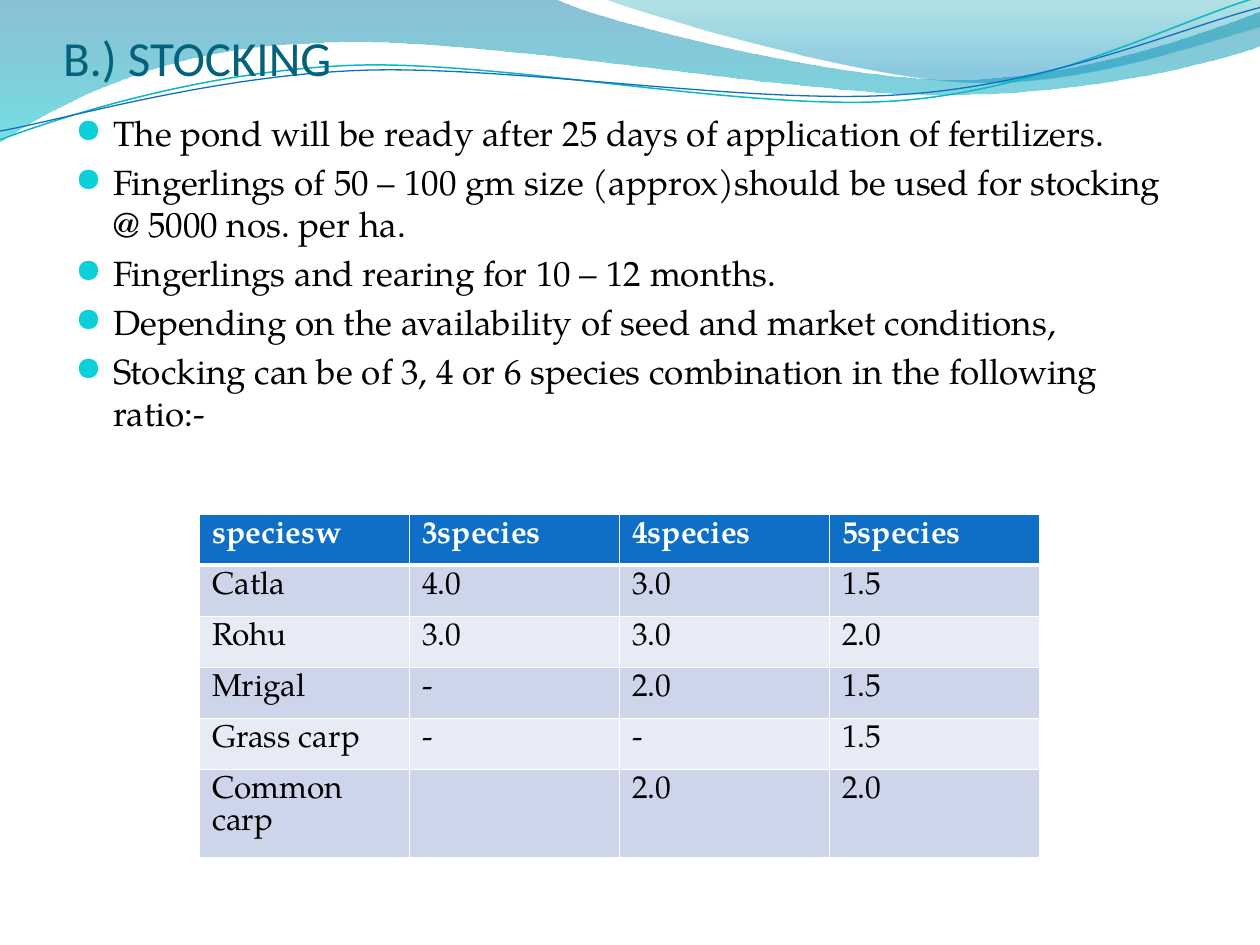
import dataclasses
import pptx
import pptx.util
import pptx.dml.color
import pptx.enum.text
import pptx.oxml
import pptx.oxml.ns

WIDE, HIGH = 10, 7.5


@dataclasses.dataclass(frozen=True)
class Theme:
    head: str = "Calibri"
    text: str = "TeX Gyre Pagella"
    mark: str = "OpenSymbol"
    title: str = "04617B"
    ink: str = "000000"
    white: str = "FFFFFF"
    bullet: str = "0BD0D9"
    blue: str = "0F6FC6"
    teal: str = "0AB8BF"
    bands: tuple = ("CCD5EA", "E7EBF5")
    big: int = 28
    body: int = 20
    cell: int = 18


THEME = Theme()

WAVES = [
    ([(0, 0), (4.4, -0.01),
      (4.76, 0.17, 6.64, 0.63, 7.58, 0.63),
      (8.53, 0.63, 9.58, 0.26, 10, 0.09), (10.01, 0.36),
      (9.83, 0.44, 8.7, 0.76, 7.46, 0.75),
      (6.22, 0.75, 3.82, 0.28, 2.57, 0.34),
      (1.29, 0.36, 0.46, 0.83, -0.01, 1.13), (0, 0)],
     [(0, "0074A1", 45), (1, "00C6CF", 55)]),
    ([(4.79, -0.01),
      (5.09, 0.11, 6.82, 0.62, 7.69, 0.65),
      (8.56, 0.69, 9.61, 0.32, 10, 0.21), (10, 0), (4.79, -0.01)],
     [(0, "00A1A9", 30), (0.8, "008BBF", 45)]),
]
STROKES = [
    ([(0, 1.11),
      (0.48, 0.93, 1.58, 0.57, 2.77, 0.52),
      (3.95, 0.47, 5.93, 0.89, 7.13, 0.8),
      (8.33, 0.71, 9.38, 0.15, 9.98, -0.02)], THEME.teal, 0.85),
    ([(0, 1.04),
      (0.47, 0.96, 1.64, 0.61, 2.83, 0.56),
      (4.03, 0.51, 5.97, 0.84, 7.17, 0.75),
      (8.36, 0.67, 9.41, 0.21, 10, 0.06)], THEME.blue, 0.75),
]
POINTS = [
    "The pond will be ready after 25 days of application of fertilizers.",
    "Fingerlings of 50 – 100 gm size (approx)should be used for stocking @ 5000 nos. per ha.",
    "Fingerlings and rearing for 10 – 12 months.",
    "Depending on the availability of seed and market conditions,",
    "Stocking can be of 3, 4 or 6 species combination in the following ratio:-",
]
RATIOS = [
    ("speciesw", "3species", "4species", "5species"),
    ("Catla", "4.0", "3.0", "1.5"),
    ("Rohu", "3.0", "3.0", "2.0"),
    ("Mrigal", "-", "2.0", "1.5"),
    ("Grass carp", "-", "-", "1.5"),
    ("Common carp", "", "2.0", "2.0"),
]


def inch(num):
    return pptx.util.Inches(num)


def shade(code):
    return pptx.dml.color.RGBColor.from_string(code)


def style(font, name, size, color, bold=False):
    font.name, font.size, font.bold = name, pptx.util.Pt(size), bold
    font.color.rgb = shade(color)


def node(tag, *kids, **attrs):
    item = pptx.oxml.parse_xml(f"<a:{tag} {pptx.oxml.ns.nsdecls('a')}/>")
    for key, val in attrs.items():
        item.set(key, str(val))
    item.extend(kids)
    return item


def add_curve(slide, parts, close):
    dots = [(inch(x), inch(y)) for part in parts for x, y in zip(part[::2], part[1::2])]
    pen = slide.shapes.build_freeform(*dots[0])
    pen.add_line_segments(dots[1:], close=close)
    shape = pen.convert_to_shape()
    shape.shadow.inherit = False
    lines = iter(list(shape._element.iter(pptx.oxml.ns.qn("a:lnTo"))))
    for part in parts[1:]:
        group = [next(lines) for _ in part[::2]]
        if len(group) == 3:
            bend = node("cubicBezTo")
            group[0].addprevious(bend)
            for line in group:
                bend.append(line[0])
                line.getparent().remove(line)
    return shape


def add_wave(slide, parts, stops):
    shape = add_curve(slide, parts, True)
    shape.line.fill.background()
    shape.fill.gradient()
    shape.fill.gradient_angle = 270
    for stop, (place, color, _) in zip(shape.fill.gradient_stops, stops):
        stop.position = place
        stop.color.rgb = shade(color)
    tag = pptx.oxml.ns.qn("a:srgbClr")
    for item, (_, _, alpha) in zip(shape._element.spPr.iter(tag), stops):
        item.append(node("alpha", val=alpha * 1000))


def add_stroke(slide, parts, color, width):
    shape = add_curve(slide, parts, False)
    shape.fill.background()
    shape.line.color.rgb = shade(color)
    shape.line.width = pptx.util.Pt(width)


def set_title(slide, text):
    title = slide.shapes.title
    slide.shapes._spTree.append(title._element)
    title.left, title.top = inch(0.05 * WIDE), inch(0.17)
    title.width, title.height = inch(0.9 * WIDE), inch(1.08)
    frame = title.text_frame
    frame.text = text
    frame.margin_left = frame.margin_right = 0
    frame.vertical_anchor = pptx.enum.text.MSO_ANCHOR.TOP
    para = frame.paragraphs[0]
    para.alignment = pptx.enum.text.PP_ALIGN.LEFT
    style(para.font, THEME.head, THEME.big, THEME.title)


def add_list(slide, lines):
    box = slide.shapes.add_textbox(inch(0.05 * WIDE), inch(HIGH / 9), inch(0.9 * WIDE), inch(6.42))
    frame = box.text_frame
    frame.word_wrap = True
    frame.text = "\n".join(lines)
    for para in frame.paragraphs:
        style(para.font, THEME.text, THEME.body, THEME.ink)
        para.space_before = pptx.util.Pt(0.2 * THEME.body)
        props = para._p.get_or_add_pPr()
        props.set("marL", str(inch(0.3)))
        props.set("indent", str(inch(-0.3)))
        marks = [node("buClr", node("srgbClr", val=THEME.bullet)),
                 node("buSzPct", val=95000),
                 node("buFont", typeface=THEME.mark),
                 node("buChar", char="●")]
        for spot, mark in enumerate(marks, 1):
            props.insert(spot, mark)


def set_edges(cell, low):
    props = cell._tc.get_or_add_tcPr()
    for spot, side in enumerate("LRTB"):
        width = low if side == "B" else 1
        fill = node("solidFill", node("srgbClr", val=THEME.white))
        props.insert(spot, node("ln" + side, fill, w=pptx.util.Pt(width)))


def add_grid(slide, rows):
    count, span = len(rows), len(rows[0])
    tall = pptx.util.Cm(1.03)
    frame = slide.shapes.add_table(count, span, inch(WIDE * 0.19 / 1.2), inch(4.08),
                                   inch(WIDE * 2 / 3), tall * count)
    for r, row in enumerate(rows):
        for c, text in enumerate(row):
            cell = frame.table.cell(r, c)
            cell.text = text
            cell.fill.solid()
            cell.fill.fore_color.rgb = shade(THEME.bands[(r - 1) % 2] if r else THEME.blue)
            set_edges(cell, 1 if r else 3)
            para = cell.text_frame.paragraphs[0]
            style(para.font, THEME.text, THEME.cell, THEME.ink if r else THEME.white, r == 0)


def main():
    deck = pptx.Presentation()
    deck.slide_width, deck.slide_height = inch(WIDE), inch(HIGH)
    slide = deck.slides.add_slide(deck.slide_layouts[5])
    for wave in WAVES:
        add_wave(slide, *wave)
    for stroke in STROKES:
        add_stroke(slide, *stroke)
    set_title(slide, "B.) STOCKING")
    add_list(slide, POINTS)
    add_grid(slide, RATIOS)
    deck.save("out.pptx")


if __name__ == "__main__":
    main()
